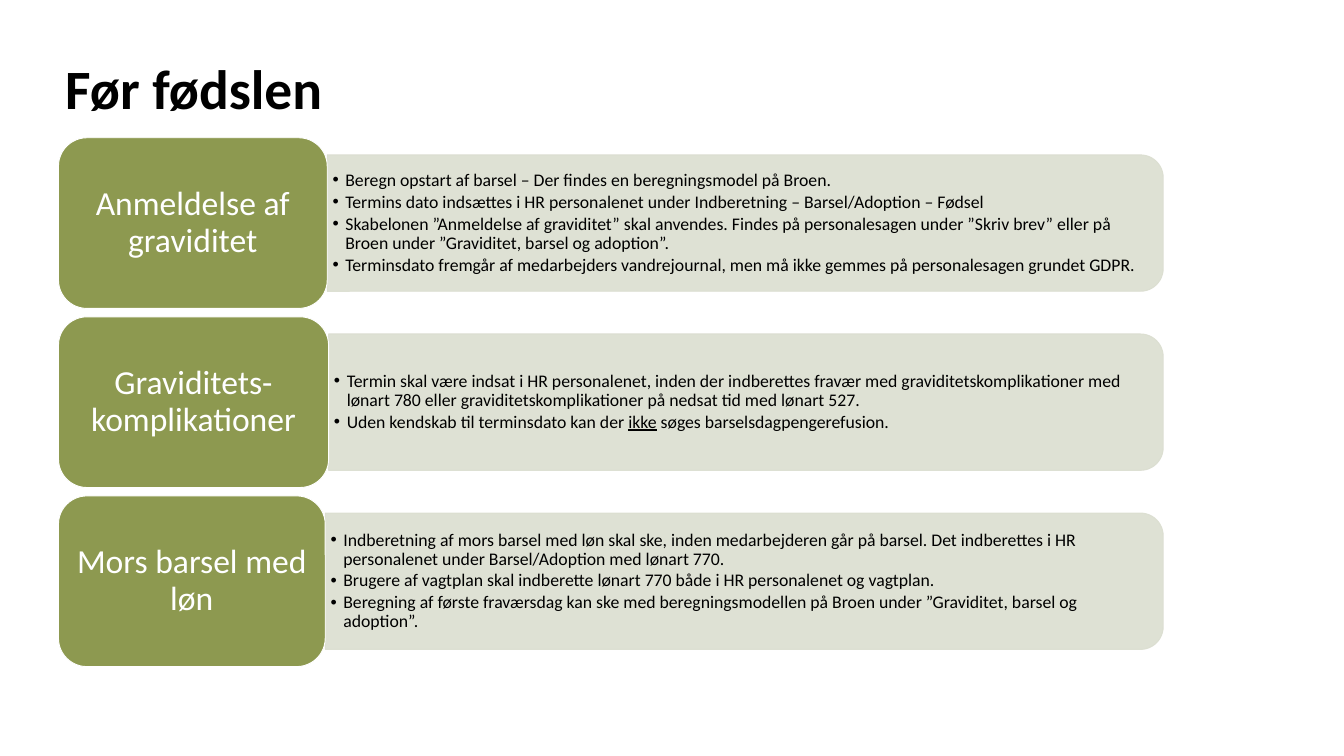
from lxml import etree
from pptx import Presentation
from pptx.dml.color import RGBColor
from pptx.enum import shapes, text
from pptx.oxml import ns
from pptx.util import Inches, Pt

OLIVE = RGBColor(0x8D, 0x99, 0x50)
PALE_OLIVE = RGBColor(0xDB, 0xDE, 0xD0)
WHITE = RGBColor(0xFF, 0xFF, 0xFF)
BLACK = RGBColor(0, 0, 0)
FONT = "Calibri"

LEFT, RIGHT = 0.87, 17.31
TOP, PITCH = 2.05, 2.665
TILE_HEIGHT, PANEL_HEIGHT = 2.54, 2.03
UNDERLINED = "ikke"

# Heading, tile width, bullets; a bullet is a list of text spans
TOPICS = [
    ("Anmeldelse af graviditet", 4.0, [
        ["Beregn opstart af barsel – Der findes en beregningsmodel på Broen."],
        ["Termins dato indsættes i HR personalenet under Indberetning – "
         "Barsel/Adoption – Fødsel"],
        ["Skabelonen ”Anmeldelse af graviditet” skal anvendes. Findes på "
         "personalesagen under ”Skriv brev” eller på Broen under "
         "”Graviditet, barsel og adoption”."],
        ["Terminsdato fremgår af medarbejders vandrejournal, men må ikke "
         "gemmes på personalesagen grundet GDPR."],
    ]),
    ("Graviditets-komplikationer", 4.02, [
        ["Termin skal være indsat i HR personalenet, inden der indberettes "
         "fravær med graviditetskomplikationer med lønart 780 eller "
         "graviditetskomplikationer på nedsat tid med lønart 527."],
        ["Uden kendskab til terminsdato kan der ", UNDERLINED,
         " søges barselsdagpengerefusion."],
    ]),
    ("Mors barsel med løn", 3.97, [
        ["Indberetning af mors barsel med løn skal ske, inden medarbejderen "
         "går på barsel. Det indberettes i HR personalenet under "
         "Barsel/Adoption med lønart 770."],
        ["Brugere af vagtplan skal indberette lønart 770 både i "
         "HR personalenet og vagtplan."],
        ["Beregning af første fraværsdag kan ske med beregningsmodellen på "
         "Broen under ”Graviditet, barsel og adoption”."],
    ]),
]


def style_font(font, size, color, bold=False):
    font.name, font.size, font.bold = FONT, Pt(size), bold
    font.color.rgb = color


def set_frame(frame, side, end):
    frame.word_wrap = True
    frame.vertical_anchor = text.MSO_ANCHOR.MIDDLE
    frame.margin_left = frame.margin_right = Inches(side)
    frame.margin_top = frame.margin_bottom = Inches(end)


def add_block(slide, kind, left, top, width, height, fill, line):
    block = slide.shapes.add_shape(
        kind, Inches(left), Inches(top), Inches(width), Inches(height))
    block.shadow.inherit = False
    block.fill.solid()
    block.fill.fore_color.rgb = fill
    block.line.color.rgb = line
    block.line.width = Pt(1)
    return block


def add_panel(slide, left, middle):
    """Add a bar whose rounded end points right: a top-rounded shape turned 90°."""
    length = RIGHT - left
    panel = add_block(
        slide, shapes.MSO_SHAPE.ROUND_2_SAME_RECTANGLE,
        (left + RIGHT - PANEL_HEIGHT) / 2, middle - length / 2,
        PANEL_HEIGHT, length, PALE_OLIVE, PALE_OLIVE)
    panel.rotation = 90
    for color in panel._element.spPr.iter(ns.qn("a:srgbClr")):
        etree.SubElement(color, ns.qn("a:alpha"), val="90000")


def add_bullets(slide, left, middle, bullets):
    height = 1.83
    box = slide.shapes.add_textbox(
        Inches(left), Inches(middle - height / 2),
        Inches(RIGHT - 0.1 - left), Inches(height))
    frame = box.text_frame
    set_frame(frame, 0.08, 0.04)
    for index, spans in enumerate(bullets):
        para = frame.add_paragraph() if index else frame.paragraphs[0]
        properties = para._p.get_or_add_pPr()
        properties.set("marL", str(Inches(0.19)))
        properties.set("indent", str(-Inches(0.19)))
        etree.SubElement(properties, ns.qn("a:buFont"), typeface="Arial")
        etree.SubElement(properties, ns.qn("a:buChar"), char="•")
        para.line_spacing = 0.9
        para.space_after = Pt(2.85)
        for words in spans:
            span = para.add_run()
            span.text = words
            style_font(span.font, 19, BLACK)
            if words == UNDERLINED:
                span.font.underline = True


def add_tile(slide, heading, top, width):
    tile = add_block(slide, shapes.MSO_SHAPE.ROUNDED_RECTANGLE,
                     LEFT, top, width, TILE_HEIGHT, OLIVE, WHITE)
    set_frame(tile.text_frame, 0.15, 0.07)
    tile.text_frame.text = heading
    para = tile.text_frame.paragraphs[0]
    para.alignment = text.PP_ALIGN.CENTER
    para.line_spacing = 0.9
    style_font(para.runs[0].font, 36, WHITE)


def set_title(slide, words):
    title = slide.shapes.title
    title.left, title.top = Inches(LEFT), Inches(0.87)
    title.width, title.height = Inches(15.17), Inches(0.97)
    set_frame(title.text_frame, 0.1, 0.05)
    title.text_frame.auto_size = text.MSO_AUTO_SIZE.NONE
    title.text_frame.text = words
    para = title.text_frame.paragraphs[0]
    para.alignment = text.PP_ALIGN.LEFT
    para.line_spacing = 0.9
    style_font(para.runs[0].font, 59.4, BLACK, bold=True)


def main():
    deck = Presentation()
    deck.slide_width, deck.slide_height = Inches(20), Inches(11.25)
    slide = deck.slides.add_slide(deck.slide_layouts[5])
    set_title(slide, "Før fødslen")
    for row, (heading, tile_width, bullets) in enumerate(TOPICS):
        top = TOP + row * PITCH
        middle = top + TILE_HEIGHT / 2
        panel_left = LEFT + tile_width
        add_panel(slide, panel_left, middle)
        add_bullets(slide, panel_left, middle, bullets)
        add_tile(slide, heading, top, tile_width)
    deck.save("out.pptx")


if __name__ == "__main__":
    main()
